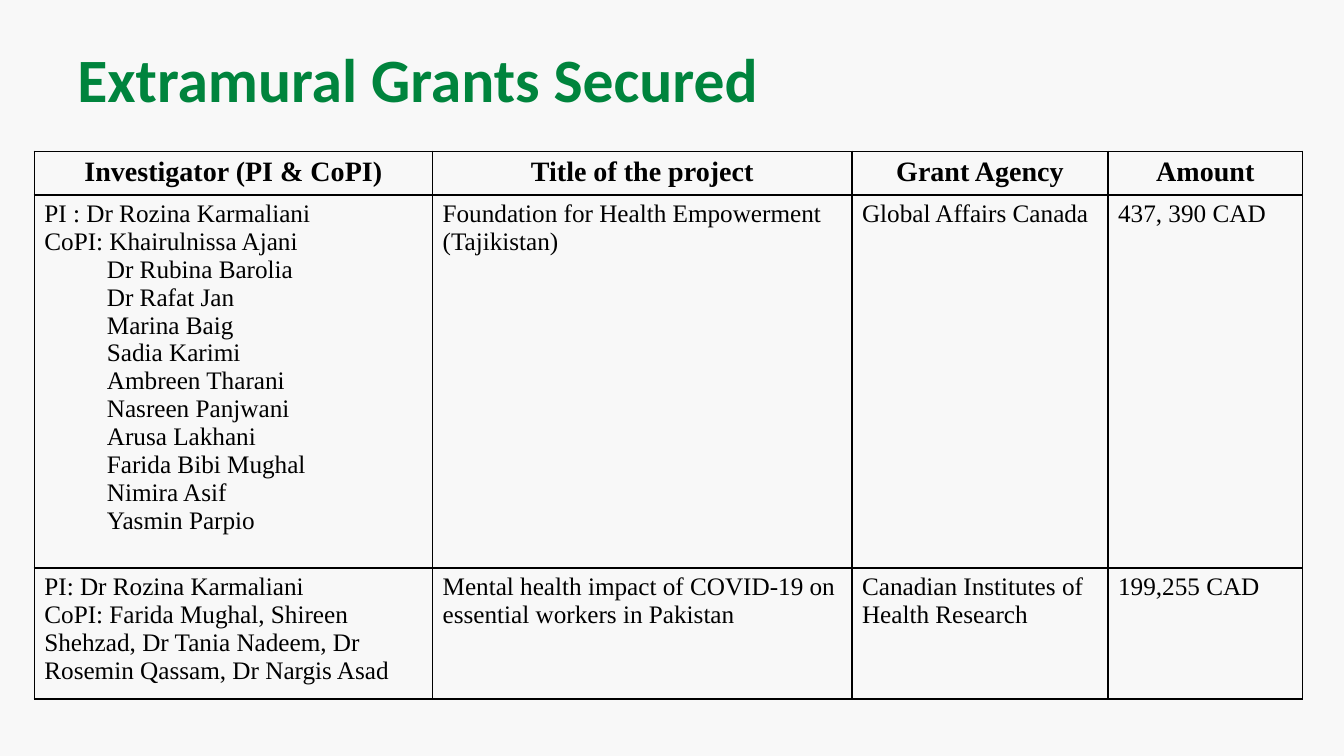
from lxml import etree
from pptx import Presentation
from pptx.dml.color import RGBColor
from pptx.enum import text as t
from pptx.oxml.ns import qn
from pptx.util import Inches, Pt

COLORS = {"background": "F8F8F8", "title": "00843D", "ink": "000000"}
TITLE = "Extramural Grants Secured"
HEADINGS = ["Investigator (PI & CoPI)", "Title of the project", "Grant Agency", "Amount"]
CO_INVESTIGATORS = [
    "Dr Rubina Barolia", "Dr Rafat Jan", "Marina Baig", "Sadia Karimi",
    "Ambreen Tharani", "Nasreen Panjwani", "Arusa Lakhani",
    "Farida Bibi Mughal", "Nimira Asif", "Yasmin Parpio",
]
GRANTS = [
    (["PI : Dr Rozina Karmaliani", "CoPI: Khairulnissa Ajani", *CO_INVESTIGATORS],
     ["Foundation for Health Empowerment (Tajikistan)"],
     ["Global Affairs Canada"],
     ["437, 390 CAD"]),
    (["PI: Dr Rozina Karmaliani",
      "CoPI: Farida Mughal, Shireen Shehzad, Dr Tania Nadeem, "
      "Dr Rosemin Qassam, Dr Nargis Asad"],
     ["Mental health impact of COVID-19 on essential workers in Pakistan"],
     ["Canadian Institutes of Health Research"],
     ["199,255 CAD"]),
]
COLUMN_WIDTHS = [3.95, 4.16, 2.54, 1.93]
ROW_HEIGHTS = [0.42, 3.42, 1.2]
NAME_INDENT = 0.62


def write(frame, lines, font="Times New Roman", size=18, color="ink", bold=False,
          align=t.PP_ALIGN.LEFT):
    """Fill a text frame, one paragraph a line, indenting listed co-investigators."""
    frame.word_wrap = True
    for index, line in enumerate(lines):
        paragraph = frame.paragraphs[0] if index == 0 else frame.add_paragraph()
        paragraph.alignment = align
        if line in CO_INVESTIGATORS:
            paragraph._p.get_or_add_pPr().set("marL", str(Inches(NAME_INDENT)))
        run = paragraph.add_run()
        run.text = line
        run.font.name = font
        run.font.size = Pt(size)
        run.font.bold = bold
        run.font.color.rgb = RGBColor.from_string(COLORS[color])


def outline(cell):
    properties = cell._tc.get_or_add_tcPr()
    for side in ("lnL", "lnR", "lnT", "lnB"):
        border = etree.SubElement(properties, qn(f"a:{side}"), w=str(Pt(1)))
        fill = etree.SubElement(border, qn("a:solidFill"))
        etree.SubElement(fill, qn("a:srgbClr"), val=COLORS["ink"])


def main():
    deck = Presentation()
    deck.slide_width, deck.slide_height = Inches(13.33), Inches(7.5)
    slide = deck.slides.add_slide(deck.slide_layouts[6])
    slide.background.fill.solid()
    slide.background.fill.fore_color.rgb = RGBColor.from_string(COLORS["background"])

    title = slide.shapes.add_textbox(Inches(0.67), Inches(0.3), Inches(12), Inches(0.95))
    title.text_frame.vertical_anchor = t.MSO_ANCHOR.MIDDLE
    write(title.text_frame, [TITLE], font="Calibri", size=44, color="title", bold=True)

    rows = [[[heading] for heading in HEADINGS], *GRANTS]
    grants = slide.shapes.add_table(
        len(rows), len(HEADINGS), Inches(0.34), Inches(1.5),
        Inches(sum(COLUMN_WIDTHS)), Inches(sum(ROW_HEIGHTS))).table
    for column, width in zip(grants.columns, COLUMN_WIDTHS):
        column.width = Inches(width)
    for row, height in zip(grants.rows, ROW_HEIGHTS):
        row.height = Inches(height)

    heading_format = dict(size=20, bold=True, align=t.PP_ALIGN.CENTER)
    for row_index, row in enumerate(rows):
        for column_index, lines in enumerate(row):
            cell = grants.cell(row_index, column_index)
            outline(cell)
            cell.fill.background()
            write(cell.text_frame, lines, **(heading_format if row_index == 0 else {}))

    deck.save("out.pptx")


if __name__ == "__main__":
    main()
